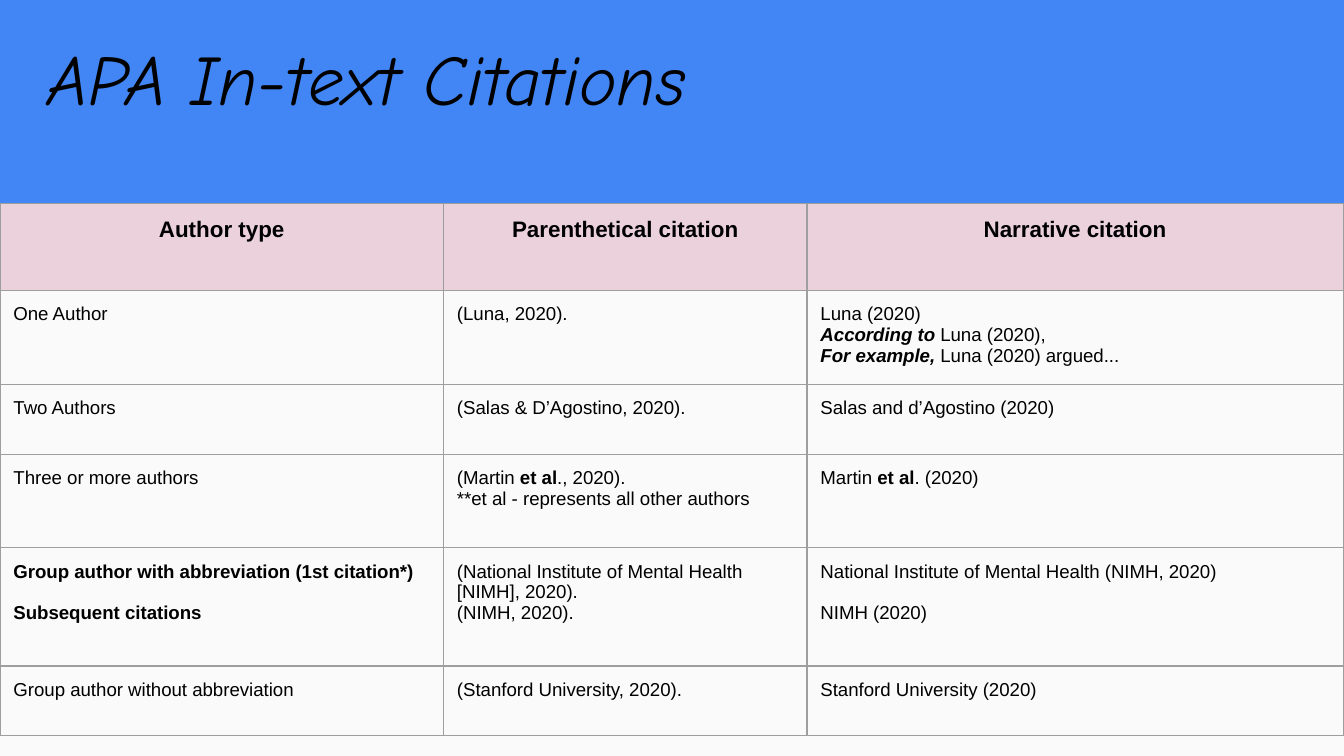
import pptx
import pptx.dml.color
import pptx.enum.shapes
import pptx.enum.text
import pptx.oxml
import pptx.oxml.ns
import pptx.util

EMU_PER_PX = 4572
PAGE_WIDTH, PAGE_HEIGHT = 2000, 1125
ALIGN = pptx.enum.text.PP_ALIGN
ANCHOR = pptx.enum.text.MSO_ANCHOR
INSET = 20
COLUMN_WIDTHS = [660, 541, 798]
ROW_HEIGHTS = [129, 140, 104, 139, 176, 104]
HEADINGS = ["Author type", "Parenthetical citation", "Narrative citation"]
BOLD = {"bold": True}
STRONG = {"bold": True, "italic": True}
CITATIONS = [
    [
        ["One Author"],
        ["(Luna, 2020)."],
        [
            "Luna (2020)",
            [("According to ", STRONG), ("Luna (2020),", {})],
            [("For example,", STRONG), (" Luna (2020) argued...", {})],
        ],
    ],
    [["Two Authors"], ["(Salas & D’Agostino, 2020)."], ["Salas and d’Agostino (2020)"]],
    [
        ["Three or more authors"],
        [
            [("(Martin ", {}), ("et al", BOLD), ("., 2020).", {})],
            "**et al - represents all other authors",
        ],
        [[("Martin ", {}), ("et al", BOLD), (". (2020)", {})]],
    ],
    [
        [
            [("Group author with abbreviation (1st citation*)", BOLD)],
            [("Subsequent citations", BOLD)],
        ],
        ["(National Institute of Mental Health [NIMH], 2020).", "(NIMH, 2020)."],
        ["National Institute of Mental Health (NIMH, 2020)", "NIMH (2020)"],
    ],
    [
        ["Group author without abbreviation"],
        ["(Stanford University, 2020)."],
        ["Stanford University (2020)"],
    ],
]
PARAGRAPH_GAPS = {(4, 0): 11, (4, 2): 11}


def px(length):
    return pptx.util.Emu(length * EMU_PER_PX)


def color(value):
    return pptx.dml.color.RGBColor.from_string(value)


def paint(fill, value):
    fill.solid()
    fill.fore_color.rgb = color(value)


def write(frame, paragraphs, size=10, font="Arial", ink="000000", bold=False,
          italic=False, align=ALIGN.LEFT, gap=0):
    frame.word_wrap = True
    for index, content in enumerate(paragraphs):
        para = frame.add_paragraph() if index else frame.paragraphs[0]
        para.alignment = align
        if index and gap:
            para.space_before = pptx.util.Pt(gap)
        spans = [(content, {})] if isinstance(content, str) else content
        for text, emphasis in spans:
            span = para.add_run()
            span.text = text
            span.font.name = font
            span.font.size = pptx.util.Pt(size)
            span.font.color.rgb = color(ink)
            span.font.bold = emphasis.get("bold", bold)
            span.font.italic = emphasis.get("italic", italic)


def set_margins(holder):
    for side in ("left", "top", "right", "bottom"):
        setattr(holder, f"margin_{side}", px(INSET))


def add_borders(cell, value="9E9E9E", width=0.75):
    properties = cell._tc.get_or_add_tcPr()
    for index, side in enumerate(("lnL", "lnR", "lnT", "lnB")):
        line = pptx.oxml.parse_xml(
            f'<a:{side} {pptx.oxml.ns.nsdecls("a")} w="{int(pptx.util.Pt(width))}">'
            f'<a:solidFill><a:srgbClr val="{value}"/></a:solidFill></a:{side}>'
        )
        properties.insert(index, line)


def add_panel(page, left, top, width, height):
    panel = page.shapes.add_shape(
        pptx.enum.shapes.MSO_SHAPE.RECTANGLE, px(left), px(top), px(width), px(height)
    )
    panel.shadow.inherit = False
    paint(panel.fill, "FAFAFA")
    panel.line.fill.background()


def add_title(page, left, top, width, height):
    box = page.shapes.add_textbox(px(left), px(top), px(width), px(height))
    frame = box.text_frame
    set_margins(frame)
    frame.vertical_anchor = ANCHOR.BOTTOM
    write(frame, ["APA In-text Citations"], size=38, font="Comic Neue", italic=True)


def add_citation_table(page, left, top):
    table = page.shapes.add_table(
        len(ROW_HEIGHTS), len(COLUMN_WIDTHS), px(left), px(top),
        px(sum(COLUMN_WIDTHS)), px(sum(ROW_HEIGHTS)),
    ).table
    table.first_row = False
    table.horz_banding = False
    for column, width in zip(table.columns, COLUMN_WIDTHS):
        column.width = px(width)
    for row, height in zip(table.rows, ROW_HEIGHTS):
        row.height = px(height)

    contents = [[[heading] for heading in HEADINGS]] + CITATIONS
    for row_index, row_contents in enumerate(contents):
        for column_index, paragraphs in enumerate(row_contents):
            cell = table.cell(row_index, column_index)
            set_margins(cell)
            cell.vertical_anchor = ANCHOR.TOP
            if row_index == 0:
                paint(cell.fill, "EAD1DC")
                write(cell.text_frame, paragraphs, size=12, bold=True, align=ALIGN.CENTER)
            else:
                cell.fill.background()
                gap = PARAGRAPH_GAPS.get((row_index, column_index), 0)
                write(cell.text_frame, paragraphs, gap=gap)
            add_borders(cell)


def main():
    deck = pptx.Presentation()
    deck.slide_width = px(PAGE_WIDTH)
    deck.slide_height = px(PAGE_HEIGHT)
    page = deck.slides.add_slide(deck.slide_layouts[6])
    paint(page.background.fill, "4285F4")
    panel_top = 368
    add_panel(page, 0, panel_top, PAGE_WIDTH, PAGE_HEIGHT - panel_top)
    add_title(page, 51, 24, 1160, 174)
    add_citation_table(page, 0, 303)
    deck.save("out.pptx")


if __name__ == "__main__":
    main()
